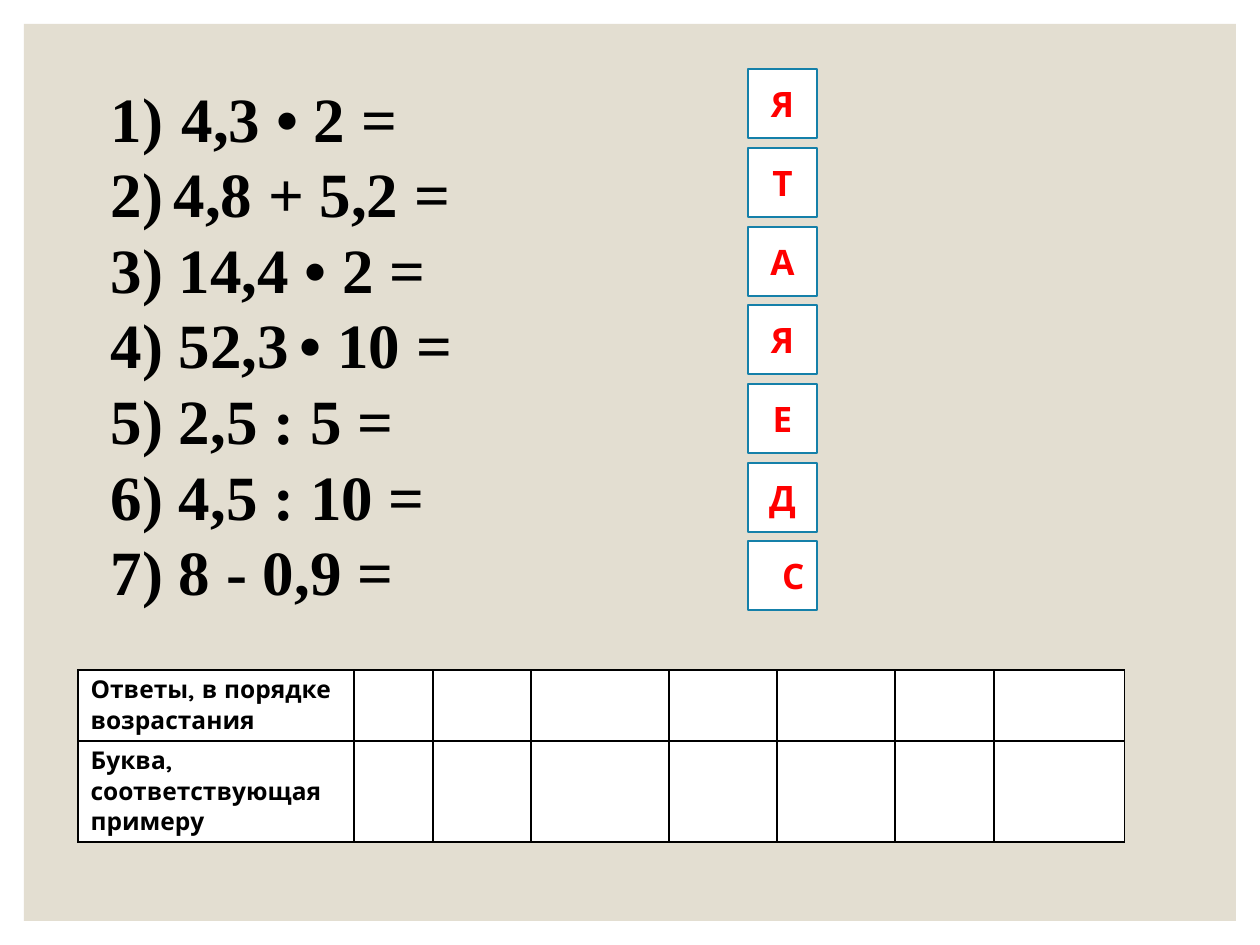
from dataclasses import dataclass

from lxml import etree
from pptx import Presentation
from pptx import util as u
from pptx.dml.color import RGBColor
from pptx.enum import shapes, text
from pptx.oxml import ns


@dataclass
class Theme:
    panel: str = "E3DED1"
    paper: str = "FFFFFF"
    ink: str = "000000"
    letter: str = "FF0000"
    outline: str = "1580A9"
    list_font: str = "Times New Roman"
    label_font: str = "Quicksand"
    list_size: int = 36
    letter_size: int = 20
    label_size: int = 14


theme = Theme()
PX_PER_INCH = 126


def px(*lengths):
    return [u.Inches(length / PX_PER_INCH) for length in lengths]


def add_span(para, words, font, size, color):
    span = para.add_run()
    span.text = words
    span.font.name = font
    span.font.size = u.Pt(size)
    span.font.bold = True
    span.font.color.rgb = RGBColor.from_string(color)


deck = Presentation()
deck.slide_width, deck.slide_height = px(1260, 945)
page = deck.slides.add_slide(deck.slide_layouts[1])
title = page.shapes.title
title.element.getparent().remove(title.element)

# Background panel, behind the list
body = page.placeholders[1]
panel = page.shapes.add_shape(shapes.MSO_SHAPE.RECTANGLE, *px(24, 24, 1212, 897))
panel.shadow.inherit = False
panel.fill.solid()
panel.fill.fore_color.rgb = RGBColor.from_string(theme.panel)
panel.line.fill.background()
body.element.addprevious(panel.element)

# Exercises: wording and tab stop; the first is numbered automatically
exercises = [
    ("4,3 • 2 =", None),
    ("2)\t4,8 + 5,2 =", 83),
    ("3) 14,4 • 2 =", None),
    ("4) 52,3\t• 10 =", 210),
    ("5) 2,5 : 5 =", None),
    ("6) 4,5 : 10 =", None),
    ("7) 8 - 0,9 =", None),
]
body.left, body.top, body.width, body.height = px(98, 69, 483, 585)
frame = body.text_frame
frame.word_wrap = True
frame.auto_size = text.MSO_AUTO_SIZE.NONE
frame.vertical_anchor = text.MSO_ANCHOR.TOP
frame.margin_top, = px(10)
for number, (words, tab_stop) in enumerate(exercises):
    para = frame.paragraphs[0] if number == 0 else frame.add_paragraph()
    para.space_before = u.Pt(0)
    para.line_spacing = u.Pt(43.2)
    props = para._p.get_or_add_pPr()
    hanging, = px(71 if number == 0 else 0)
    props.set("marL", str(hanging))
    props.set("indent", str(-hanging))
    if number == 0:
        etree.SubElement(props, ns.qn("a:buFont"), typeface=theme.list_font)
        etree.SubElement(props, ns.qn("a:buAutoNum"), type="arabicParenR")
    else:
        etree.SubElement(props, ns.qn("a:buNone"))
    if tab_stop:
        tabs = etree.SubElement(props, ns.qn("a:tabLst"))
        etree.SubElement(tabs, ns.qn("a:tab"), pos=str(px(tab_stop)[0]), algn="l")
    add_span(para, words, theme.list_font, theme.list_size, theme.ink)

# Answer table
labels = ["Ответы, в порядке возрастания", "Буква, соответствующая примеру"]
column_widths = px(276, 79, 98, 138, 108, 118, 99, 131)
row_heights = px(71, 101)
holder = page.shapes.add_table(
    len(row_heights), len(column_widths), *px(78, 670), sum(column_widths), sum(row_heights)
)
table = holder.table
for column, width in zip(table.columns, column_widths):
    column.width = width
for row, height, label in zip(table.rows, row_heights, labels):
    row.height = height
    for cell in row.cells:
        cell.margin_top, cell.margin_bottom = px(4, 4)
        props = cell._tc.get_or_add_tcPr()
        for side in ("lnL", "lnR", "lnT", "lnB"):
            border = etree.SubElement(props, ns.qn(f"a:{side}"), w=str(u.Pt(1)))
            fill = etree.SubElement(border, ns.qn("a:solidFill"))
            etree.SubElement(fill, ns.qn("a:srgbClr"), val=theme.ink)
        cell.fill.solid()
        cell.fill.fore_color.rgb = RGBColor.from_string(theme.paper)
    para = row.cells[0].text_frame.paragraphs[0]
    add_span(para, label, theme.label_font, theme.label_size, theme.ink)

# Letter cards; the last letter sits to the right
letters = "ЯТАЯЕДС"
for index, letter in enumerate(letters):
    card = page.shapes.add_shape(
        shapes.MSO_SHAPE.RECTANGLE, *px(748, 69 + round(index * 78.75), 69, 69)
    )
    card.shadow.inherit = False
    card.fill.solid()
    card.fill.fore_color.rgb = RGBColor.from_string(theme.paper)
    card.line.color.rgb = RGBColor.from_string(theme.outline)
    card.line.width = u.Pt(1)
    frame = card.text_frame
    frame.word_wrap = True
    frame.vertical_anchor = text.MSO_ANCHOR.MIDDLE
    if index == len(letters) - 1:
        frame.margin_left, = px(34)
    para = frame.paragraphs[0]
    para.alignment = text.PP_ALIGN.CENTER
    add_span(para, letter, theme.label_font, theme.letter_size, theme.letter)

deck.save("out.pptx")
